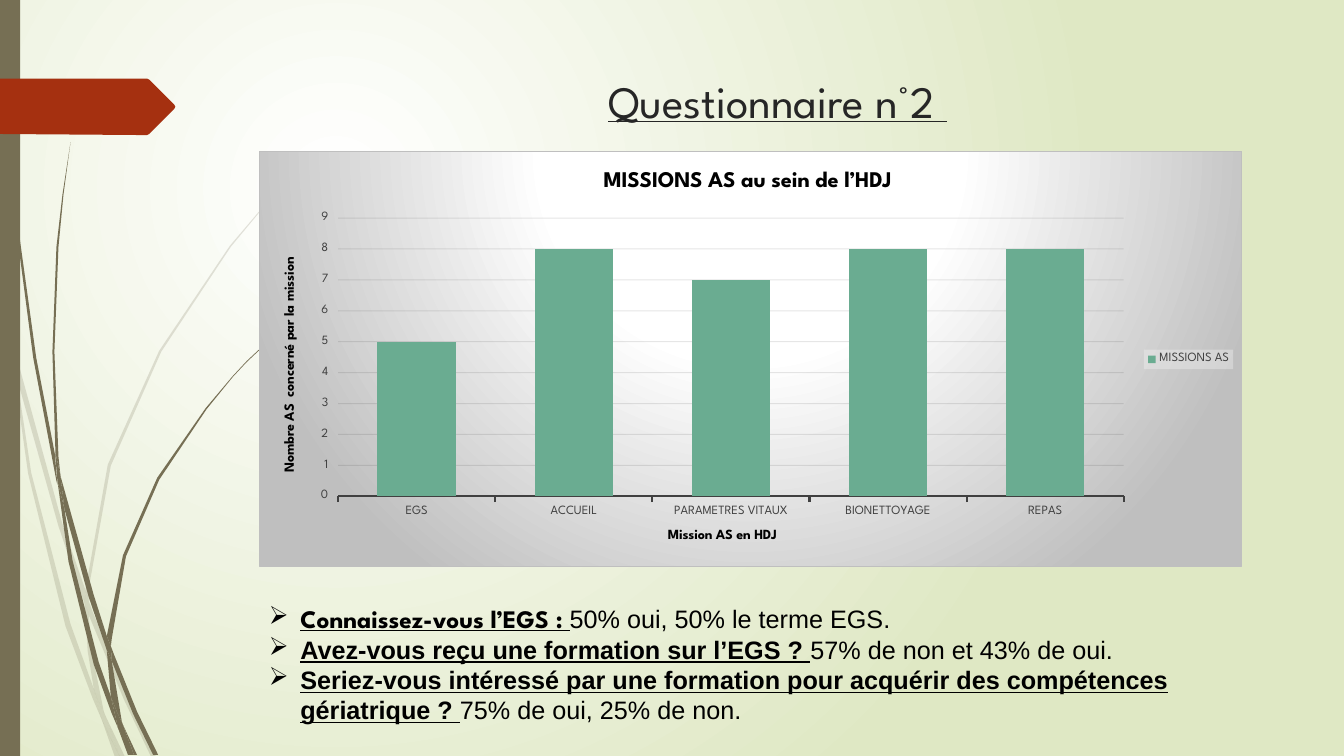
from pptx import Presentation
from pptx.chart.data import CategoryChartData
from pptx.dml.color import RGBColor
from pptx.enum.chart import XL_CHART_TYPE as ChartType, XL_LEGEND_POSITION as LegendPosition
from pptx.enum.chart import XL_TICK_MARK as TickMark
from pptx.enum.shapes import MSO_SHAPE as Preset
from pptx.enum.text import MSO_AUTO_SIZE as AutoSize, PP_ALIGN as Align
from pptx.oxml import parse_xml
from pptx.oxml.ns import nsdecls, qn
from pptx.util import Cm, Pt


class Theme:
    font, body_font = "League Spartan", "Arial"
    stem, arrow, bar = "766F54", "A53010", "6AAC91"
    title, text, label, grid = "262626", "000000", "404040", "0D0D0D"
    border, legend = "BFBFBF", "F2F2F2"
    title_size, body_size, chart_title_size, axis_title_size, label_size = 32, 18, 16, 10, 9
    # stops as (percent, colour), focus as left, top, right, bottom percent
    slide_gradient = [(0, "FFFFFF"), (100, "DFE8C4")], (50, 50, 100, 100)
    chart_gradient = [(0, "FFFFFF"), (39, "FFFFFF"), (100, "BFBFBF")], (50, -80, 50, 180)


TITLE = "Questionnaire n°2 "
CHART = {
    "title": "MISSIONS AS au sein de l’HDJ ",
    "series": "MISSIONS AS",
    "x_title": "Mission AS en HDJ",
    "y_title": "Nombre AS  concerné par la mission",
    "values": {"EGS": 5, "ACCUEIL": 8, "PARAMETRES VITAUX": 7, "BIONETTOYAGE": 8, "REPAS": 8},
}
PLOT_AREA = {"x": 0.08, "y": 0.16, "w": 0.8, "h": 0.67}
ANSWERS = [
    ("Connaissez-vous l’EGS : ", "50% oui, 50% le terme EGS.", Theme.font),
    ("Avez-vous reçu une formation sur l’EGS ? ", "57% de non et 43% de oui.", Theme.body_font),
    ("Seriez-vous intéressé par une formation pour acquérir des compétences gériatrique ? ",
     "75% de oui, 25% de non.", Theme.body_font),
]

# Outline points, in units of UNIT
UNIT = Cm(0.0254)
PALE_GRASS = [
    [(11, 350), (9, 322), (0, 282), (0, 299), (10, 344)],
    [(58, 522), (84, 599), (85, 586), (62, 520), (14, 345), (17, 376)],
    [(92, 607), (88, 596), (88, 610), (123, 694), (150, 751), (155, 751), (127, 692)],
    [(119, 751), (124, 751), (105, 711)],
    [(93, 683), (70, 619), (31, 469), (17, 376), (11, 350), (28, 470), (65, 621), (92, 693),
     (101, 714), (99, 707)],
    [(84, 599), (87, 646), (93, 683), (96, 692), (105, 711), (103, 706), (91, 646), (88, 610),
     (88, 608)],
    [(88, 584), (110, 462), (160, 349), (229, 245), (268, 198), (290, 175), (312, 154),
     (312, 153), (289, 175), (268, 197), (228, 244), (158, 348), (107, 461), (85, 584),
     (85, 586), (88, 596)],
    [(101, 714), (114, 751), (119, 751)],
    [(88, 608), (88, 610), (88, 596), (85, 586), (84, 599)],
    [(96, 692), (93, 683), (99, 707), (101, 714), (119, 751), (105, 711)],
]
DARK_GRASS = [
    [(7, 110), (17, 233), (33, 355), (56, 477), (57, 481), (55, 457), (55, 453), (36, 355),
     (19, 232), (8, 109), (5, 48), (4, 0), (3, 0), (4, 48)],
    [(88, 592), (106, 645), (106, 631), (93, 590), (60, 472), (64, 505)],
    [(113, 649), (110, 641), (111, 656), (132, 708), (152, 749), (157, 749), (136, 706)],
    [(110, 691), (98, 657), (72, 556), (64, 505), (57, 477), (68, 557), (93, 659), (111, 708),
     (117, 722), (116, 717)],
    [(60, 472), (58, 453), (54, 349), (58, 245), (63, 193), (70, 141), (62, 193), (56, 245),
     (52, 349), (55, 449)],
    [(133, 749), (136, 749), (122, 719)],
    [(57, 477), (64, 505), (60, 472), (55, 449), (55, 453)],
    [(111, 633), (125, 552), (158, 476), (205, 406), (231, 374), (245, 359), (261, 344),
     (260, 344), (245, 358), (231, 373), (204, 405), (156, 474), (122, 551), (106, 631),
     (110, 641)],
    [(117, 722), (127, 749), (131, 749)],
    [(106, 645), (110, 691), (116, 706), (122, 719), (121, 716), (111, 656), (109, 651)],
    [(106, 645), (109, 651), (111, 656), (110, 641), (106, 631)],
    [(116, 706), (110, 691), (116, 717), (117, 722), (130, 749), (133, 749), (122, 719)],
]
ARROW = [(173, 108), (148, 133), (146, 134), (136, 134), (0, 133), (0, 78), (146, 78),
         (148, 79), (173, 104), (174, 106)]


def colour(name):
    return RGBColor.from_string(name)


def circle_gradient(stops, focus):
    stop_xml = "".join(f'<a:gs pos="{pos * 1000}"><a:srgbClr val="{val}"/></a:gs>'
                       for pos, val in stops)
    edges = " ".join(f'{side}="{value * 1000}"' for side, value in zip("ltrb", focus))
    return (f'<a:gradFill {nsdecls("a")} rotWithShape="1"><a:gsLst>{stop_xml}</a:gsLst>'
            f'<a:path path="circle"><a:fillToRect {edges}/></a:path></a:gradFill>')


def set_opacity(element, percent):
    for color in element.iter(qn("a:srgbClr")):
        color.append(parse_xml(f'<a:alpha {nsdecls("a")} val="{percent * 1000}"/>'))


def paint(shape, fill):
    shape.shadow.inherit = False
    shape.fill.solid()
    shape.fill.fore_color.rgb = colour(fill)
    shape.line.fill.background()


def add_outline(shapes, points, fill, opacity=100):
    builder = shapes.build_freeform(*points[0], scale=UNIT)
    builder.add_line_segments(points[1:], close=True)
    shape = builder.convert_to_shape()
    paint(shape, fill)
    if opacity < 100:
        set_opacity(shape._element.spPr, opacity)


def set_font(font, size, color, name=Theme.font, bold=False, underline=False):
    font.size, font.name, font.bold, font.underline = Pt(size), name, bold, underline
    font.color.rgb = colour(color)


def add_decor(slide):
    slide.background.fill.solid()
    properties = next(slide._element.iter(qn("p:bgPr")))
    properties.replace(properties[0], parse_xml(circle_gradient(*Theme.slide_gradient)))
    for grass, opacity in ((PALE_GRASS, 20), (DARK_GRASS, 100)):
        group = slide.shapes.add_group_shape()
        for blade in grass:
            add_outline(group.shapes, blade, Theme.stem, opacity)
    paint(slide.shapes.add_shape(Preset.RECTANGLE, 0, 0, Cm(0.51), Cm(19.05)), Theme.stem)
    add_outline(slide.shapes, ARROW, Theme.arrow)


def add_title(slide):
    frame = slide.shapes.add_textbox(Cm(7.21), Cm(1.73), Cm(24.77), Cm(3.56)).text_frame
    frame.word_wrap = True
    paragraph = frame.paragraphs[0]
    paragraph.text, paragraph.alignment = TITLE, Align.CENTER
    set_font(paragraph.font, Theme.title_size, Theme.title, underline=True)


def put_title(target, text, size):
    """Give the chart or an axis its bold title."""
    target.text_frame.text = text
    set_font(target.text_frame.paragraphs[0].font, size, Theme.text, bold=True)


def add_missions_chart(slide):
    data = CategoryChartData()
    data.categories = list(CHART["values"])
    data.add_series(CHART["series"], list(CHART["values"].values()))
    chart = slide.shapes.add_chart(ChartType.COLUMN_CLUSTERED, Cm(6.53), Cm(3.81),
                                   Cm(24.77), Cm(10.49), data).chart
    set_font(chart.font, Theme.axis_title_size, Theme.text)
    put_title(chart.chart_title, CHART["title"], Theme.chart_title_size)
    chart.chart_title.include_in_layout = False

    plot = chart.plots[0]
    plot.gap_width, plot.vary_by_categories = 100, False
    bars = plot.series[0].format.fill
    bars.solid()
    bars.fore_color.rgb = colour(Theme.bar)

    categories, values = chart.category_axis, chart.value_axis
    for axis, title in ((categories, CHART["x_title"]), (values, CHART["y_title"])):
        put_title(axis.axis_title, title, Theme.axis_title_size)
        set_font(axis.tick_labels.font, Theme.label_size, Theme.label)
        axis.major_tick_mark, axis.minor_tick_mark = TickMark.OUTSIDE, TickMark.NONE
    values.axis_title.text_frame._txBody.bodyPr.set("rot", "-5400000")
    categories.format.line.color.rgb = colour(Theme.label)
    categories.format.line.width = Pt(1.5)
    values.minimum_scale, values.maximum_scale, values.major_unit = 0, 9, 1
    values.format.line.fill.background()
    grid = values.major_gridlines
    grid.format.line.color.rgb = colour(Theme.grid)
    grid.format.line.width = Pt(0.75)
    set_opacity(values._element.find(qn("c:majorGridlines")), 10)

    chart.has_legend = True
    legend = chart.legend
    legend.position, legend.include_in_layout = LegendPosition.RIGHT, False
    set_font(legend.font, Theme.label_size, Theme.label)
    legend_box = parse_xml(f'<c:spPr {nsdecls("c", "a")}><a:solidFill>'
                           f'<a:srgbClr val="{Theme.legend}"/></a:solidFill></c:spPr>')
    set_opacity(legend_box, 39)
    legend._element.find(qn("c:txPr")).addprevious(legend_box)

    area = chart._chartSpace.find(qn("c:chart"))
    area.addnext(parse_xml(
        f'<c:spPr {nsdecls("c", "a")}>{circle_gradient(*Theme.chart_gradient)}'
        f'<a:ln w="{Pt(0.75)}"><a:solidFill><a:srgbClr val="{Theme.border}"/></a:solidFill>'
        '</a:ln></c:spPr>'))
    plot_area = area.find(qn("c:plotArea"))
    for old_layout in plot_area.findall(qn("c:layout")):
        plot_area.remove(old_layout)
    sizes = "".join(f'<c:{key} val="{value}"/>' for key, value in PLOT_AREA.items())
    plot_area.insert(0, parse_xml(
        f'<c:layout {nsdecls("c")}><c:manualLayout><c:layoutTarget val="inner"/>'
        f'<c:xMode val="edge"/><c:yMode val="edge"/>{sizes}</c:manualLayout></c:layout>'))


def add_answers(slide):
    frame = slide.shapes.add_textbox(Cm(6.53), Cm(15.09), Cm(25.43), Cm(3.33)).text_frame
    frame.word_wrap, frame.auto_size = True, AutoSize.SHAPE_TO_FIT_TEXT
    for index, (question, answer, question_font) in enumerate(ANSWERS):
        paragraph = frame.add_paragraph() if index else frame.paragraphs[0]
        for text, name, strong in ((question, question_font, True),
                                   (answer, Theme.body_font, False)):
            run = paragraph.add_run()
            run.text = text
            set_font(run.font, Theme.body_size, Theme.text, name, strong, strong)
        properties = paragraph._p.get_or_add_pPr()
        properties.set("marL", str(Cm(0.79)))
        properties.set("indent", str(-Cm(0.79)))
        properties.append(parse_xml(f'<a:buChar {nsdecls("a")} char="➢"/>'))


def main():
    presentation = Presentation()
    presentation.slide_width, presentation.slide_height = Cm(33.87), Cm(19.05)
    slide = presentation.slides.add_slide(presentation.slide_layouts[6])
    add_decor(slide)
    add_title(slide)
    add_missions_chart(slide)
    add_answers(slide)
    presentation.save("out.pptx")


if __name__ == "__main__":
    main()
